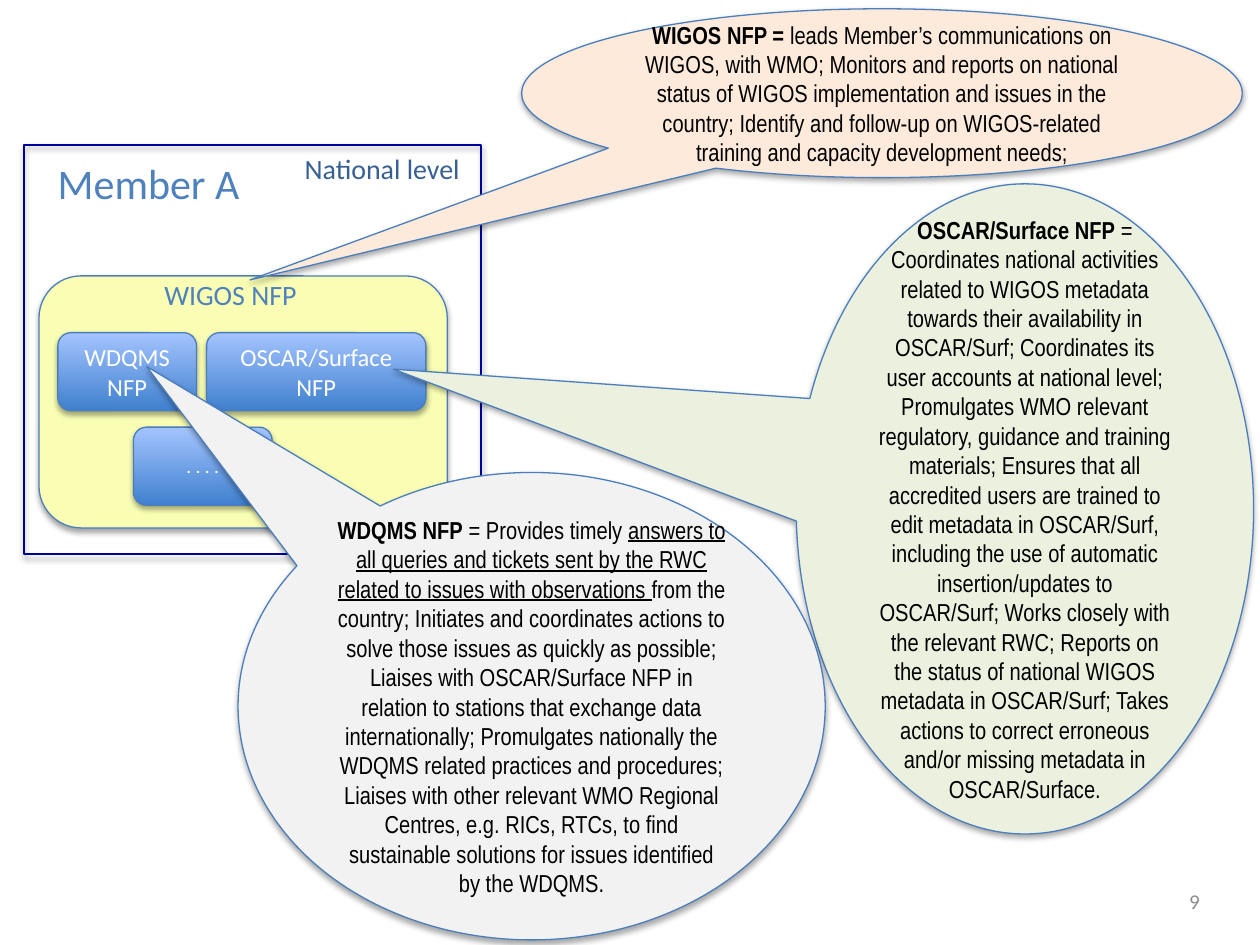
"""Build the slide on the duties of national focal points in Member A."""
from dataclasses import dataclass

from pptx import Presentation
from pptx.dml.color import RGBColor
from pptx.enum import shapes, text
from pptx.util import Inches, Pt


@dataclass(frozen=True)
class Theme:
    body: str = "Calibri"
    narrow: str = "Arial Narrow"
    outline: str = "4B7EBC"
    frame: str = "000099"
    heading: str = "4F81BD"
    level: str = "376092"
    number: str = "8C8C8C"
    black: str = "000000"
    white: str = "FFFFFF"
    yellow: str = "F9FEB4"
    peach: str = "FDEADA"
    green: str = "EBF1DE"
    grey: str = "F2F2F2"
    gradient: tuple = ("3F80CE", "A4C4FF")
    title_size: int = 24
    label_size: int = 16
    text_size: int = 14
    number_size: int = 12
    dots_size: int = 11


def add_outlined(container, kind, box, fill, line=Theme.outline, width=0.75):
    shape = container.add_shape(kind, *map(Inches, box))
    if fill is None:
        shape.fill.background()
    elif isinstance(fill, tuple):
        shape.fill.gradient()
        shape.fill.gradient_angle = 90
        for stop, color in zip(shape.fill.gradient_stops, fill):
            stop.color.rgb = RGBColor.from_string(color)
    else:
        shape.fill.solid()
        shape.fill.fore_color.rgb = RGBColor.from_string(fill)
    shape.line.color.rgb = RGBColor.from_string(line)
    shape.line.width = Pt(width)
    return shape


def write(shape, runs, size, color, font=Theme.body, align=text.PP_ALIGN.CENTER,
          anchor=text.MSO_ANCHOR.MIDDLE, wrap=True):
    frame = shape.text_frame
    frame.word_wrap = wrap
    frame.vertical_anchor = anchor
    paragraph = frame.paragraphs[0]
    paragraph.alignment = align
    for content, style in runs:
        run = paragraph.add_run()
        run.text = content
        run.font.name = font
        run.font.size = Pt(size)
        run.font.color.rgb = RGBColor.from_string(color)
        run.font.bold = style == "bold"
        run.font.underline = style == "underline"


theme = Theme()
kinds = shapes.MSO_SHAPE
align = text.PP_ALIGN
presentation = Presentation()
presentation.slide_width, presentation.slide_height = Inches(10), Inches(7.5)
slide = presentation.slides.add_slide(presentation.slide_layouts[6])

number = slide.shapes.add_textbox(*map(Inches, (7.29, 6.95, 2.33, 0.4)))
write(number, [("9", "")], theme.number_size, theme.number, align=align.RIGHT)

member = slide.shapes.add_group_shape().shapes
add_outlined(member, kinds.FLOWCHART_PROCESS, (0.19, 1.15, 3.63, 3.25), None, theme.frame, 1.25)
add_outlined(member, kinds.ROUNDED_RECTANGLE, (0.31, 2.19, 3.24, 2), theme.yellow)

focal_points = [
    ("OSCAR/Surface NFP", 1.64, 2.64, 1.74, theme.text_size),
    ("WDQMS NFP", 0.46, 2.64, 1.1, theme.text_size),
    (". . . .", 1.06, 3.39, 1.1, theme.dots_size),
]
for name, left, top, width, size in focal_points:
    button = add_outlined(member, kinds.ROUNDED_RECTANGLE, (left, top, width, 0.62), theme.gradient)
    write(button, [(name, "")], size, theme.white)

labels = [
    ("Member A", (0.35, 1.2, 1.66, 0.5), theme.title_size, theme.heading, align.CENTER, False),
    ("WIGOS NFP", (0.65, 2.15, 2.36, 0.37), theme.label_size, theme.heading, align.CENTER, True),
    ("National level", (2.32, 1.15, 1.74, 0.37), theme.label_size, theme.level, align.LEFT, True),
]
for name, box, size, color, alignment, wrap in labels:
    label = member.add_textbox(*map(Inches, box))
    write(label, [(name, "")], size, color, align=alignment, anchor=text.MSO_ANCHOR.TOP, wrap=wrap)
    label.text_frame.auto_size = text.MSO_AUTO_SIZE.SHAPE_TO_FIT_TEXT

callouts = [
    ((4.14, 0.07, 5.72, 1.34), (-0.877, 1.106), theme.peach, [
        ("WIGOS NFP = ", "bold"),
        ("leads Member’s communications on WIGOS, with WMO; Monitors and reports on national "
         "status of WIGOS implementation and issues in the country; Identify and follow-up on "
         "WIGOS-related training and capacity development needs;", ""),
    ]),
    ((6.32, 1.46, 3.63, 5.16), (-1.381, -0.215), theme.green, [
        ("OSCAR/Surface NFP", "bold"),
        (" = Coordinates national activities related to WIGOS metadata towards their "
         "availability in OSCAR/Surf; Coordinates its user accounts at national level; "
         "Promulgates WMO relevant regulatory, guidance and training materials; Ensures that "
         "all accredited users are trained to edit metadata in OSCAR/Surf, including the use "
         "of automatic insertion/updates to OSCAR/Surf; Works closely with the relevant RWC; "
         "Reports on the status of national WIGOS metadata in OSCAR/Surf; Takes actions to "
         "correct erroneous and/or missing metadata in OSCAR/Surface.", ""),
    ]),
    ((1.89, 3.75, 4.66, 3.71), (-0.656, -0.727), theme.grey, [
        ("WDQMS NFP", "bold"),
        (" = Provides timely ", ""),
        ("answers to all queries and tickets sent by the RWC related to issues with "
         "observations ", "underline"),
        ("from the country; Initiates and coordinates actions to solve those issues as "
         "quickly as possible; Liaises with OSCAR/Surface NFP in relation to stations that "
         "exchange data internationally; Promulgates nationally the WDQMS related practices "
         "and procedures; Liaises with other relevant WMO Regional Centres, e.g. RICs, RTCs, "
         "to find sustainable solutions for issues identified by the WDQMS.", ""),
    ]),
]
for box, tip, fill, runs in callouts:
    callout = add_outlined(slide.shapes, kinds.OVAL_CALLOUT, box, fill)
    callout.adjustments[0], callout.adjustments[1] = tip
    write(callout, runs, theme.text_size, theme.black, theme.narrow)

presentation.save("out.pptx")
